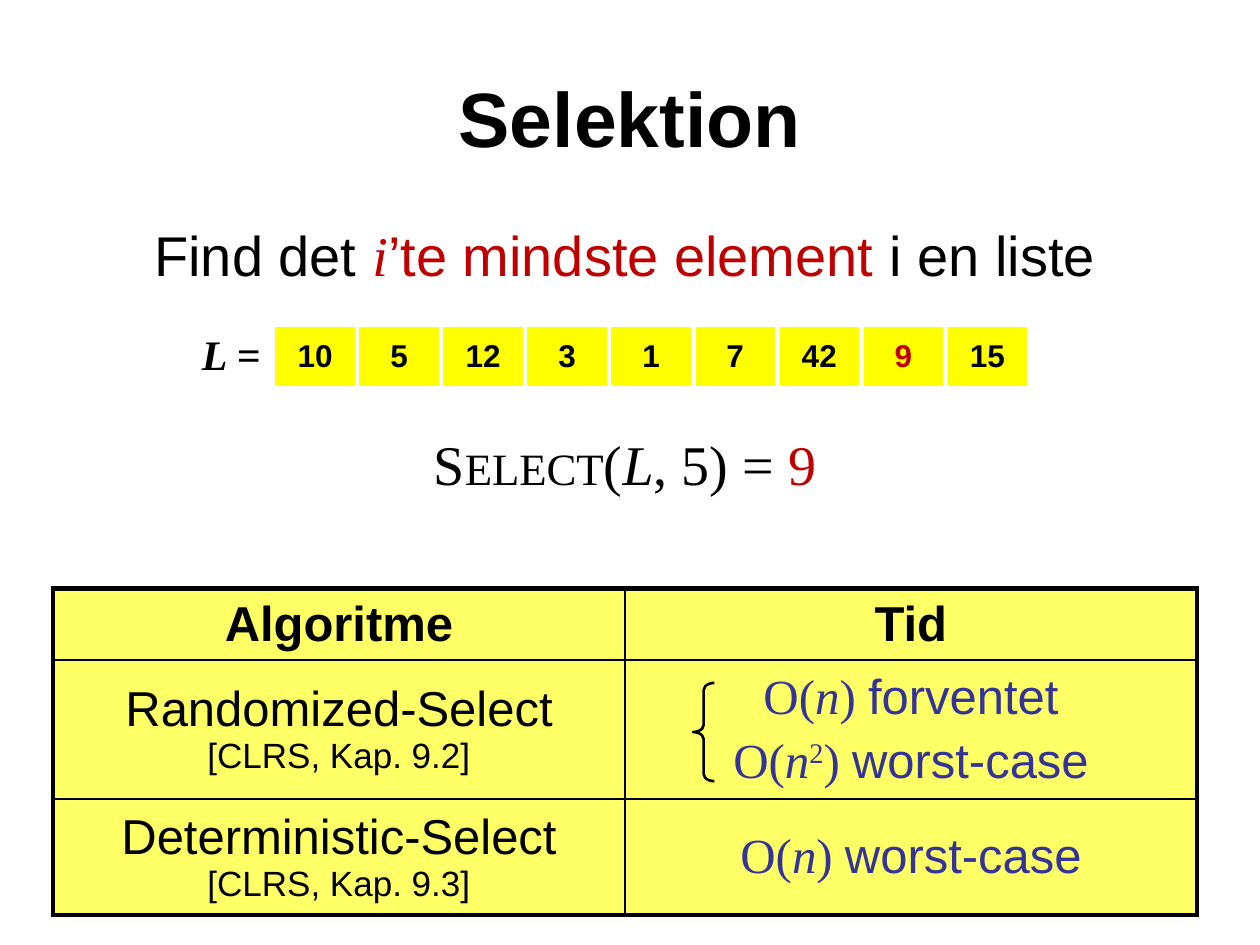
import pptx
import pptx.dml.color
import pptx.enum.shapes
import pptx.enum.text
import pptx.oxml
import pptx.oxml.ns
import pptx.util
from pptx.util import Inches

COLORS = {"black": "000000", "white": "FFFFFF", "red": "C00000", "blue": "333399",
          "cell": "FFFF66", "item": "FFFF00"}
SERIF = {"name": "Times New Roman"}
ITALIC = {**SERIF, "italic": True}
CENTER = pptx.enum.text.PP_ALIGN.CENTER
MIDDLE = pptx.enum.text.MSO_ANCHOR.MIDDLE


def write(frame, lines, size, color="black", align=CENTER, before=0):
    """Fill a text frame; each line is a list of (text, format) spans."""
    for index, line in enumerate(lines):
        para = frame.paragraphs[0] if index == 0 else frame.add_paragraph()
        para.alignment = align
        para.space_before = pptx.util.Pt(before)
        for text, changes in line:
            style = {"name": "Arial", "size": size, "color": color, **changes}
            span = para.add_run()
            span.text = text
            span.font.color.rgb = pptx.dml.color.RGBColor.from_string(COLORS[style.pop("color")])
            span.font.size = pptx.util.Pt(style.pop("size"))
            if style.pop("small_caps", False):
                span.font._element.set("cap", "small")
            if style.pop("superscript", False):
                span.font._element.set("baseline", "30000")
            for name, value in style.items():
                setattr(span.font, name, value)


def finish_cell(cell, fill, border, widths):
    """Set borders (left, right, top, bottom, in points), fill and anchor."""
    cell.vertical_anchor = MIDDLE
    properties = cell._tc.get_or_add_tcPr()
    for side, width in zip("LRTB", widths):
        properties.append(pptx.oxml.parse_xml(
            f'<a:ln{side} {pptx.oxml.ns.nsdecls("a")} w="{width * 12700}"><a:solidFill>'
            f'<a:srgbClr val="{COLORS[border]}"/></a:solidFill></a:ln{side}>'))
    if fill:
        cell.fill.solid()
        cell.fill.fore_color.rgb = pptx.dml.color.RGBColor.from_string(COLORS[fill])
    else:
        cell.fill.background()


deck = pptx.Presentation()
deck.slide_width, deck.slide_height = Inches(10), Inches(7.5)
page = deck.slides.add_slide(deck.slide_layouts[6])

# Title, task and example call
texts = [
    (0.5, 0.3, 1.25, 44, [("Selektion", {"bold": True})]),
    (0.46, 1.71, 0.61, 32, [("Find det ", {}), ("i", {**ITALIC, "color": "red"}),
                            ("’te mindste element", {"color": "red"}), (" i en liste", {})]),
    (0.46, 3.37, 0.61, 32, [("Select", {**SERIF, "small_caps": True}), ("(", SERIF),
                            ("L", ITALIC), (", 5) = ", SERIF), ("9", {**SERIF, "color": "red"})]),
]
for left, top, height, size, line in texts:
    box = page.shapes.add_textbox(Inches(left), Inches(top), Inches(9), Inches(height))
    box.text_frame.word_wrap = True
    box.text_frame.vertical_anchor = MIDDLE
    write(box.text_frame, [line], size)

# Algorithm table
linear = [("O(", SERIF), ("n", ITALIC), (") ", SERIF)]
quadratic = [*linear[:2], ("2", {**SERIF, "superscript": True}), linear[2]]
rows = [
    (0.53, [[("Algoritme", {"bold": True})]], [[("Tid", {"bold": True})]], "black"),
    (1.05, [[("Randomized-Select", {})], [("[CLRS, Kap. 9.2]", {"size": 20})]],
     [linear + [("forventet", {})], quadratic + [("worst-case", {})]], "blue"),
    (0.92, [[("Deterministic-Select", {})], [("[CLRS, Kap. 9.3]", {"size": 20})]],
     [linear + [("worst-case", {})]], "blue"),
]
algorithms = page.shapes.add_table(3, 2, Inches(0.42), Inches(4.67), Inches(9.08), Inches(2.5)).table
algorithms.first_row = algorithms.horz_banding = False
for row, (height, names, times, time_color) in enumerate(rows):
    algorithms.rows[row].height = Inches(height)
    for column, (lines, color) in enumerate([(names, "black"), (times, time_color)]):
        cell = algorithms.cell(row, column)
        outer = [column == 0, column == 1, row == 0, row == 2]
        finish_cell(cell, "cell", "black", [3 if edge else 1 for edge in outer])
        gap = 5 if column == 1 or row == 0 else 0
        write(cell.text_frame, lines, 28, color, before=gap)

# List of numbers
numbers = [10, 5, 12, 3, 1, 7, 42, 9, 15]
items = page.shapes.add_table(1, 10, Inches(1.5), Inches(2.58), Inches(6.67), Inches(0.45)).table
items.first_row = items.horz_banding = False
label = items.cell(0, 0)
finish_cell(label, None, "white", [1, 3, 1, 3])
write(label.text_frame, [[("L =", {**ITALIC, "bold": True})]], 24,
      align=pptx.enum.text.PP_ALIGN.RIGHT)
for column, number in enumerate(numbers, start=1):
    cell = items.cell(0, column)
    finish_cell(cell, "item", "white", [3] * 4)
    write(cell.text_frame, [[(str(number), {"bold": True})]], 18, "red" if number == 9 else "black")

# Brace joining the two running times
brace = page.shapes.add_shape(pptx.enum.shapes.MSO_SHAPE.LEFT_BRACE,
                              Inches(5.5), Inches(5.42), Inches(0.17), Inches(0.78))
brace.adjustments[0] = 0.33
brace.shadow.inherit = False
brace.fill.background()
brace.line.color.rgb = pptx.dml.color.RGBColor.from_string(COLORS["black"])
brace.line.width = pptx.util.Pt(1.5)

deck.save("out.pptx")
